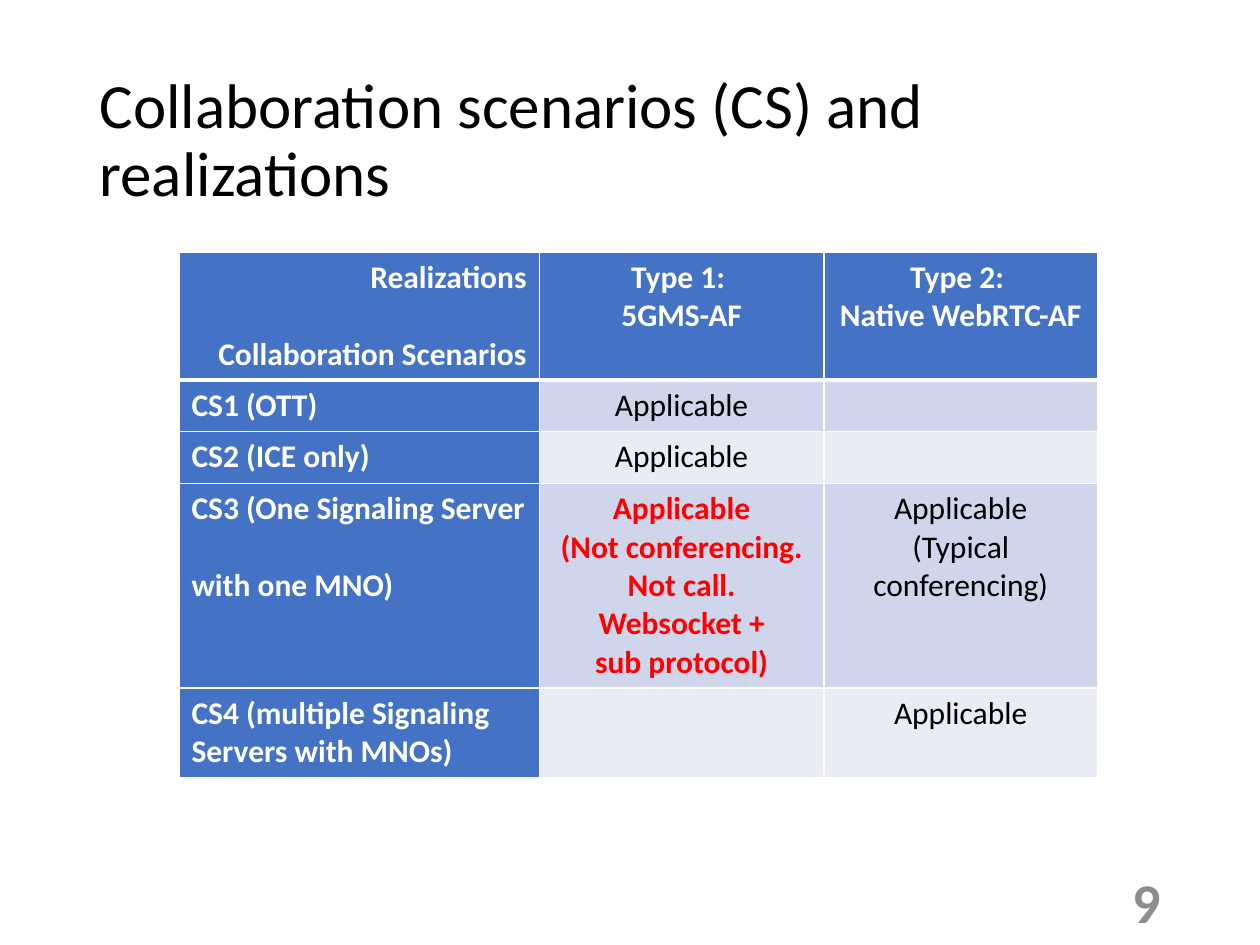
from pptx import Presentation
from pptx.dml.color import RGBColor
from pptx.enum.text import MSO_ANCHOR, PP_ALIGN
from pptx.oxml import parse_xml
from pptx.oxml.ns import nsdecls
from pptx.util import Inches, Pt

BLACK = RGBColor(0x00, 0x00, 0x00)
WHITE = RGBColor(0xFF, 0xFF, 0xFF)
RED = RGBColor(0xFF, 0x00, 0x00)
GRAY = RGBColor(0x8C, 0x8C, 0x8C)
BLUE = RGBColor(0x44, 0x72, 0xC4)
BANDS = (RGBColor(0xCF, 0xD5, 0xEA), RGBColor(0xE9, 0xEB, 0xF5))

COLUMN_WIDTHS = (2.86, 2.26, 2.17)
ROW_HEIGHTS = (1.01, 0.41, 0.41, 1.62, 0.7)
HIGHLIGHTED_CELL = (3, 1)
ROWS = (
    (("Realizations", "Collaboration Scenarios"), ("Type 1: ", "5GMS-AF"), ("Type 2: \nNative WebRTC-AF",)),
    (("CS1 (OTT)",), ("Applicable",), ()),
    (("CS2 (ICE only)",), ("Applicable",), ()),
    (
        ("CS3 (One Signaling Server \nwith one MNO)",),
        ("Applicable", "(Not conferencing.", "Not call.", "Websocket +\nsub protocol)"),
        ("Applicable", "(Typical conferencing)"),
    ),
    (("CS4 (multiple Signaling Servers with MNOs)",), (), ("Applicable",)),
)


def write_text(frame, *texts, font_name="Calibri", size=18, color=BLACK, bold=False,
               alignment=PP_ALIGN.LEFT, line_spacing=None, gap=0):
    for index, text in enumerate(texts):
        paragraph = frame.paragraphs[0] if index == 0 else frame.add_paragraph()
        paragraph.text = text
        paragraph.alignment = alignment
        if line_spacing:
            paragraph.line_spacing = line_spacing
        if index and gap:
            paragraph.space_before = Pt(gap)
        for run in paragraph.runs:
            run.font.name = font_name
            run.font.size = Pt(size)
            run.font.bold = bold
            run.font.color.rgb = color


class SlideBuilder:
    def __init__(self, slide, font_name="Calibri"):
        self.slide = slide
        self.font_name = font_name

    def title(self, text, left, top, width, height):
        shape = self.slide.shapes.title
        shape.left, shape.top = Inches(left), Inches(top)
        shape.width, shape.height = Inches(width), Inches(height)
        shape.text_frame.vertical_anchor = MSO_ANCHOR.MIDDLE
        write_text(shape.text_frame, text, font_name=self.font_name, size=36, line_spacing=0.9)

    def text_box(self, text, left, top, width, height, **text_format):
        shape = self.slide.shapes.add_textbox(Inches(left), Inches(top), Inches(width), Inches(height))
        shape.text_frame.word_wrap = True
        shape.text_frame.vertical_anchor = MSO_ANCHOR.MIDDLE
        write_text(shape.text_frame, text, font_name=self.font_name, **text_format)

    def borders(self, cell, row_index):
        top = 3 if row_index == 1 else 1
        bottom = 3 if row_index == 0 else 1
        properties = cell._tc.get_or_add_tcPr()
        for side, width in (("L", 1), ("R", 1), ("T", top), ("B", bottom)):
            properties.append(parse_xml(
                f'<a:ln{side} {nsdecls("a")} w="{Pt(width)}"><a:solidFill>'
                f'<a:srgbClr val="{WHITE}"/></a:solidFill></a:ln{side}>'
            ))

    def cell(self, cell, texts, row_index, column_index):
        is_header = row_index == 0 or column_index == 0
        is_highlighted = (row_index, column_index) == HIGHLIGHTED_CELL
        self.borders(cell, row_index)
        cell.fill.solid()
        cell.fill.fore_color.rgb = BLUE if is_header else BANDS[(row_index - 1) % 2]
        alignment = PP_ALIGN.CENTER
        if column_index == 0:
            alignment = PP_ALIGN.RIGHT if row_index == 0 else PP_ALIGN.LEFT
        write_text(
            cell.text_frame,
            *texts,
            font_name=self.font_name,
            color=WHITE if is_header else RED if is_highlighted else BLACK,
            bold=is_header or is_highlighted,
            alignment=alignment,
            gap=22 if row_index == column_index == 0 else 0,
        )

    def table(self, rows, left, top):
        table = self.slide.shapes.add_table(
            len(rows), len(COLUMN_WIDTHS), Inches(left), Inches(top),
            Inches(sum(COLUMN_WIDTHS)), Inches(sum(ROW_HEIGHTS)),
        ).table
        for column, width in zip(table.columns, COLUMN_WIDTHS):
            column.width = Inches(width)
        for row_index, (row, height) in enumerate(zip(rows, ROW_HEIGHTS)):
            table.rows[row_index].height = Inches(height)
            for column_index, texts in enumerate(row):
                self.cell(table.cell(row_index, column_index), texts, row_index, column_index)


def main():
    presentation = Presentation()
    presentation.slide_width = Inches(10)
    presentation.slide_height = Inches(7.5)
    builder = SlideBuilder(presentation.slides.add_slide(presentation.slide_layouts[5]))
    builder.title("Collaboration scenarios (CS) and realizations", 0.69, 0.4, 8.62, 1.45)
    builder.table(ROWS, 1.42, 2)
    builder.text_box("9", 7.06, 6.95, 2.25, 0.4, size=32, color=GRAY, bold=True, alignment=PP_ALIGN.RIGHT)
    presentation.save("out.pptx")


if __name__ == "__main__":
    main()
